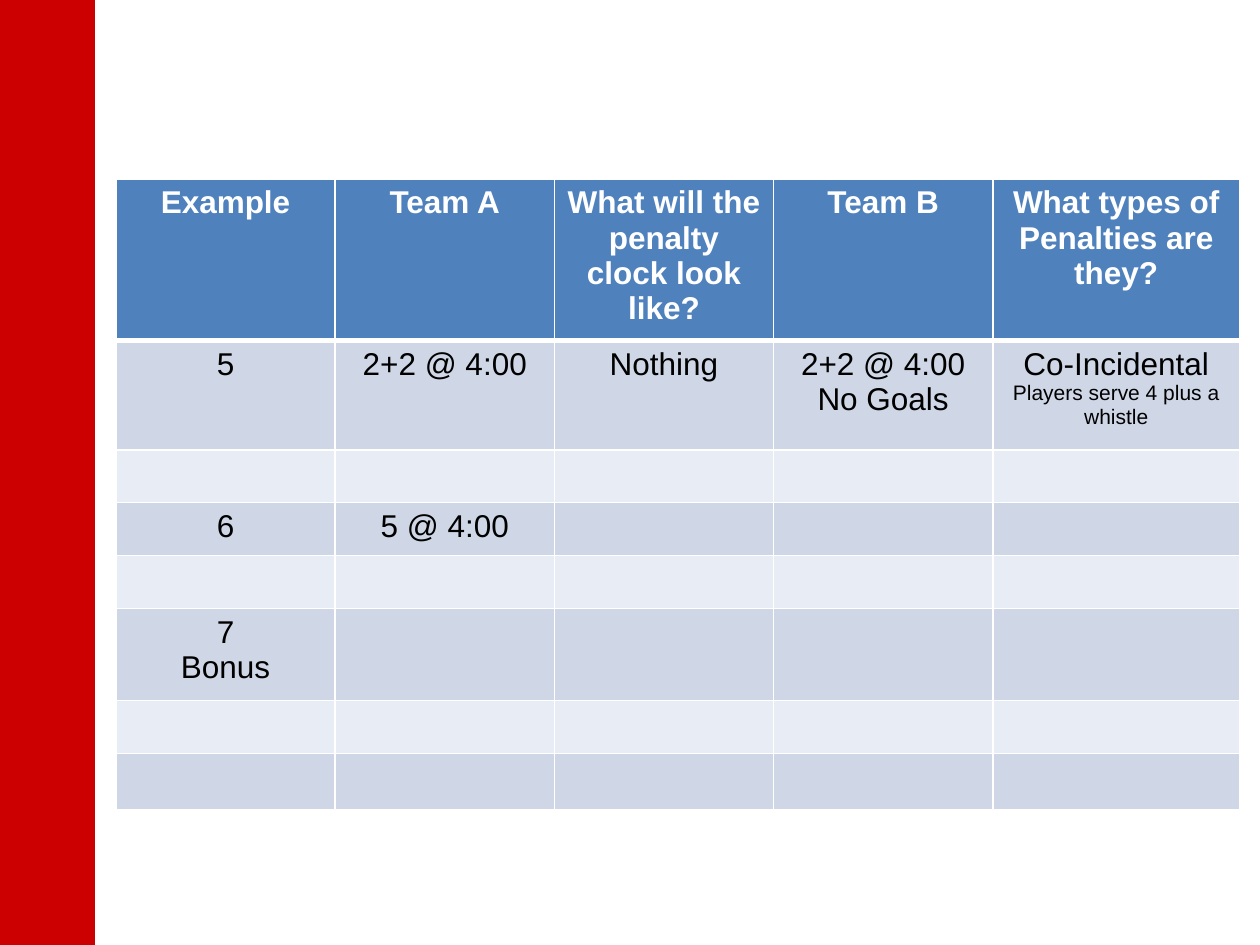
from lxml.etree import SubElement
from pptx import Presentation
from pptx.dml.color import RGBColor
from pptx.enum.shapes import MSO_SHAPE as Shape
from pptx.enum.text import PP_ALIGN as Align
from pptx.oxml.ns import qn
from pptx.util import Inches, Pt

RED = RGBColor(0xCC, 0x00, 0x00)
BLUE = RGBColor(0x4F, 0x81, 0xBD)
BAND_DARK = RGBColor(0xCF, 0xD7, 0xE7)
BAND_LIGHT = RGBColor(0xE8, 0xEC, 0xF4)
WHITE = RGBColor(0xFF, 0xFF, 0xFF)
BLACK = RGBColor(0x00, 0x00, 0x00)

FONT = "Arial"
BODY_SIZE, NOTE_SIZE = 18, 12
COLUMN_WIDTHS = [1.74] * 4 + [1.96]
ROW_HEIGHTS = [1.28, 0.87, 0.42, 0.42, 0.42, 0.73, 0.42, 0.45]

# Each cell is a list of (text, size) lines; rows left short stay empty.
HEADINGS = ["Example", "Team A", "What will the penalty clock look like?",
            "Team B", "What types of Penalties are they?"]
PENALTIES = {
    0: [[(heading, BODY_SIZE)] for heading in HEADINGS],
    1: [[("5", BODY_SIZE)],
        [("2+2 @ 4:00", BODY_SIZE)],
        [("Nothing", BODY_SIZE)],
        [("2+2 @ 4:00", BODY_SIZE), ("No Goals", BODY_SIZE)],
        [("Co-Incidental", BODY_SIZE),
         ("Players serve 4 plus a whistle", NOTE_SIZE)]],
    3: [[("6", BODY_SIZE)], [("5 @ 4:00", BODY_SIZE)]],
    5: [[("7", BODY_SIZE), ("Bonus", BODY_SIZE)]],
}


def add_side_band(slide, left, top, width, height):
    band = slide.shapes.add_shape(Shape.RECTANGLE, left, top, width, height)
    band.shadow.inherit = False
    band.fill.solid()
    band.fill.fore_color.rgb = RED
    band.line.color.rgb = RED
    band.line.width = Pt(0.75)


def set_borders(cell, top, bottom):
    """Draw white cell edges; top and bottom are widths in points."""
    properties = cell._tc.get_or_add_tcPr()
    edges = {"a:lnL": 1, "a:lnR": 1, "a:lnT": top, "a:lnB": bottom}
    for position, (tag, width) in enumerate(edges.items()):
        edge = properties.makeelement(qn(tag), {"w": str(Pt(width))})
        fill = SubElement(edge, qn("a:solidFill"))
        SubElement(fill, qn("a:srgbClr"), val=str(WHITE))
        properties.insert(position, edge)


def write_lines(cell, lines, color, bold):
    frame = cell.text_frame
    for index, (text, size) in enumerate(lines):
        paragraph = frame.add_paragraph() if index else frame.paragraphs[0]
        paragraph.alignment = Align.CENTER
        run = paragraph.add_run()
        run.text = text
        run.font.name = FONT
        run.font.size = Pt(size)
        run.font.bold = bold
        run.font.color.rgb = color


def add_penalty_table(slide, left, top):
    table = slide.shapes.add_table(
        len(ROW_HEIGHTS), len(COLUMN_WIDTHS), left, top,
        Inches(sum(COLUMN_WIDTHS)), Inches(sum(ROW_HEIGHTS))).table
    for column, width in zip(table.columns, COLUMN_WIDTHS):
        column.width = Inches(width)

    for row_index, (row, height) in enumerate(zip(table.rows, ROW_HEIGHTS)):
        row.height = Inches(height)
        is_header = row_index == 0
        band = BAND_DARK if row_index % 2 else BAND_LIGHT
        entries = PENALTIES.get(row_index, [])
        for column_index, cell in enumerate(row.cells):
            cell.fill.solid()
            cell.fill.fore_color.rgb = BLUE if is_header else band
            set_borders(cell, top=3 if row_index == 1 else 1,
                        bottom=3 if is_header else 1)
            if column_index < len(entries):
                write_lines(cell, entries[column_index],
                            WHITE if is_header else BLACK, is_header)
            else:
                cell.text_frame.paragraphs[0].font.size = Pt(BODY_SIZE)


def main():
    deck = Presentation()
    deck.slide_width, deck.slide_height = Inches(10), Inches(7.5)
    slide = deck.slides.add_slide(deck.slide_layouts[6])
    add_side_band(slide, 0, 0, Inches(0.75), deck.slide_height)
    add_penalty_table(slide, Inches(0.92), Inches(1.42))
    deck.save("out.pptx")


if __name__ == "__main__":
    main()
